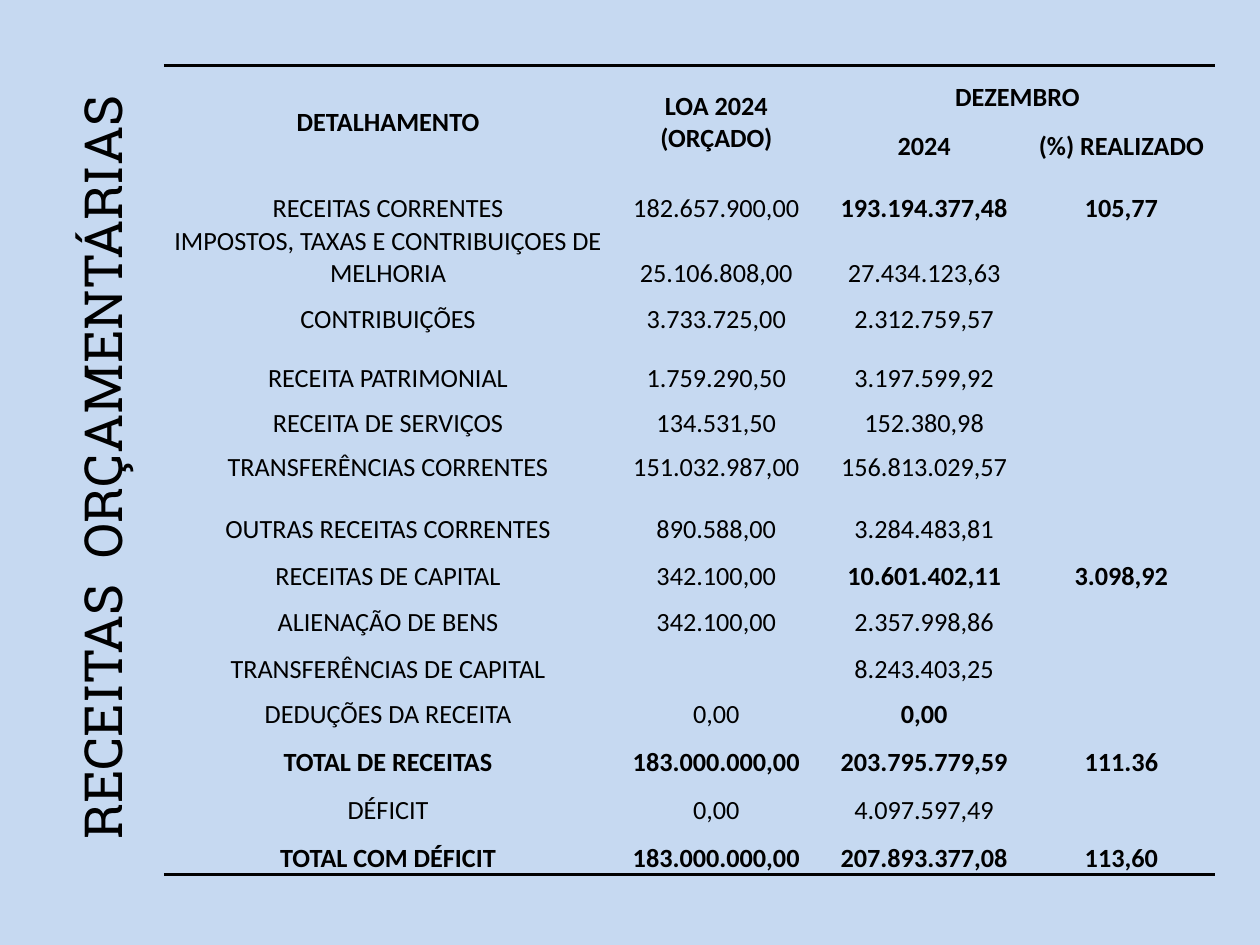
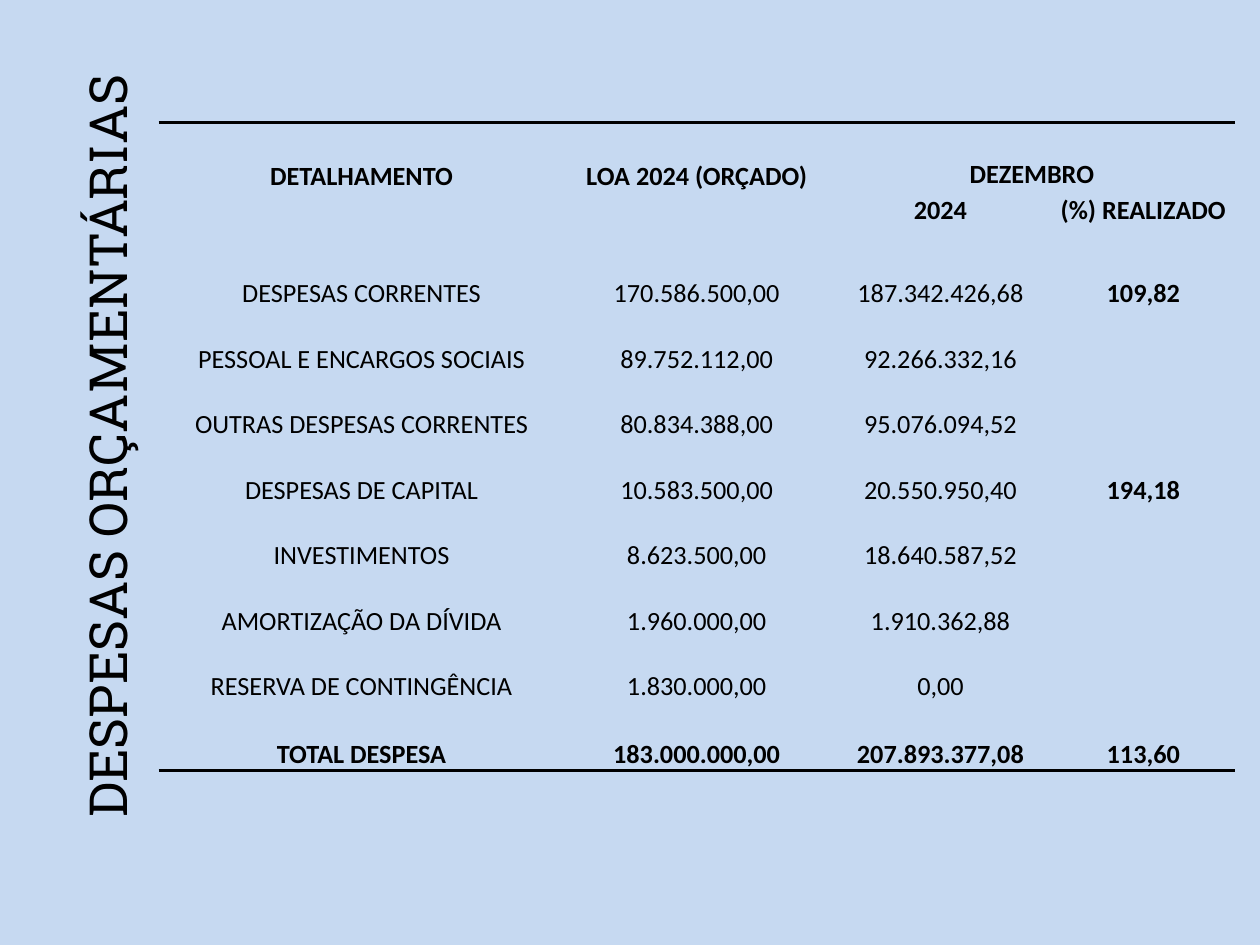
from lxml import etree
from pptx import Presentation
from pptx.dml.color import RGBColor
from pptx.enum import text
from pptx.oxml import ns
from pptx.util import Inches, Pt

COLORS = {"background": "C6D9F1", "ink": "000000"}
TITLE_FONT, TABLE_FONT = "Roboto Slab", "Calibri"
NO_GRID_STYLE = "{2D5ABB26-0587-4C30-8999-92F81FD0307C}"
HEADER_ROWS = 2

# Label, budget, executed, percentage
REVENUE = [
    ("RECEITAS CORRENTES", "182.657.900,00", "193.194.377,48", "105,77"),
    ("IMPOSTOS, TAXAS E CONTRIBUIÇOES DE MELHORIA", "25.106.808,00", "27.434.123,63", ""),
    ("CONTRIBUIÇÕES", "3.733.725,00", "2.312.759,57", ""),
    ("RECEITA PATRIMONIAL", "1.759.290,50", "3.197.599,92", ""),
    ("RECEITA DE SERVIÇOS", "134.531,50", "152.380,98", ""),
    ("TRANSFERÊNCIAS CORRENTES", "151.032.987,00", "156.813.029,57", ""),
    ("OUTRAS RECEITAS CORRENTES", "890.588,00", "3.284.483,81", ""),
    ("RECEITAS DE CAPITAL", "342.100,00", "10.601.402,11", "3.098,92"),
    ("ALIENAÇÃO DE BENS", "342.100,00", "2.357.998,86", ""),
    ("TRANSFERÊNCIAS DE CAPITAL", "", "8.243.403,25", ""),
    ("DEDUÇÕES DA RECEITA", "0,00", "0,00", ""),
    ("TOTAL DE RECEITAS", "183.000.000,00", "203.795.779,59", "111.36"),
    ("DÉFICIT", "0,00", "4.097.597,49", ""),
    ("TOTAL COM DÉFICIT", "183.000.000,00", "207.893.377,08", "113,60"),
]
REVENUE_GROUPS = {"RECEITAS CORRENTES", "RECEITAS DE CAPITAL", "DEDUÇÕES DA RECEITA"}
EXPENSES = [
    ("DESPESAS CORRENTES", "170.586.500,00", "187.342.426,68", "109,82"),
    ("PESSOAL E ENCARGOS SOCIAIS", "89.752.112,00", "92.266.332,16", ""),
    ("OUTRAS DESPESAS CORRENTES", "80.834.388,00", "95.076.094,52", ""),
    ("DESPESAS DE CAPITAL", "10.583.500,00", "20.550.950,40", "194,18"),
    ("INVESTIMENTOS", "8.623.500,00", "18.640.587,52", ""),
    ("AMORTIZAÇÃO DA DÍVIDA", "1.960.000,00", "1.910.362,88", ""),
    ("RESERVA DE CONTINGÊNCIA", "1.830.000,00", "0,00", ""),
    ("TOTAL DESPESA", "183.000.000,00", "207.893.377,08", "113,60"),
]


def write(tf, content, font=TABLE_FONT, size=15, bold=False):
    p = tf.paragraphs[0]
    p.alignment = text.PP_ALIGN.CENTER
    p.font.size = Pt(size)
    if content:
        r = p.add_run()
        r.text = content
        r.font.name, r.font.size, r.font.bold = font, Pt(size), bold
        r.font.color.rgb = RGBColor.from_string(COLORS["ink"])


def add_rule(cell, edge):
    """Draw a 2 pt line on one edge: lnT or lnB."""
    ln = etree.Element(ns.qn("a:" + edge), w=str(Pt(2)))
    fill = etree.SubElement(ln, ns.qn("a:solidFill"))
    etree.SubElement(fill, ns.qn("a:srgbClr"), val=COLORS["ink"])
    cell._tc.get_or_add_tcPr().insert(0, ln)


def style_cell(cell, anchor):
    cell.fill.solid()
    cell.fill.fore_color.rgb = RGBColor.from_string(COLORS["background"])
    cell.margin_left = cell.margin_right = cell.margin_top = Inches(0.01)
    cell.margin_bottom = 0
    cell.vertical_anchor = anchor


def add_title(slide, box, content, wrap):
    sp = slide.shapes.add_textbox(*map(Inches, box))
    tf = sp.text_frame
    tf.word_wrap = wrap
    tf.auto_size = text.MSO_AUTO_SIZE.SHAPE_TO_FIT_TEXT
    tf._txBody.bodyPr.set("vert", "vert270")
    write(tf, content, font=TITLE_FONT, size=30)


def add_budget_table(slide, left, top, widths, heights, rows, strong, blank_spans):
    box = (left, top, sum(widths), sum(heights))
    frame = slide.shapes.add_table(len(heights), len(widths), *map(Inches, box))
    table = frame.table
    table.first_row = table.horz_banding = False
    table._tbl.tblPr.find(ns.qn("a:tableStyleId")).text = NO_GRID_STYLE
    for column, width in zip(table.columns, widths):
        column.width = Inches(width)
    for row, height in zip(table.rows, heights):
        row.height = Inches(height)

    # Header and body text
    header = [("DETALHAMENTO", "LOA 2024 (ORÇADO)", "DEZEMBRO", ""),
              ("", "", "2024", "(%) REALIZADO")]
    for i, values in enumerate(header + rows):
        for j, value in enumerate(values):
            cell = table.cell(i, j)
            low = i >= HEADER_ROWS or value == "DEZEMBRO"
            style_cell(cell, text.MSO_ANCHOR.BOTTOM if low else text.MSO_ANCHOR.MIDDLE)
            bold = (i < HEADER_ROWS or j == 3 or values[0].startswith("TOTAL")
                    or (j == 2 and values[0] in strong))
            write(cell.text_frame, value, bold=bold)

    # Outer rules
    for j in range(len(widths)):
        add_rule(table.cell(0, j), "lnT")
        add_rule(table.cell(len(heights) - 1, j), "lnB")

    # Merged header cells and empty percentages
    for j in (0, 1):
        table.cell(0, j).merge(table.cell(1, j))
    table.cell(0, 2).merge(table.cell(0, 3))
    for first, last in blank_spans:
        table.cell(first, 3).merge(table.cell(last, 3))


def add_slide(prs):
    slide = prs.slides.add_slide(prs.slide_layouts[6])
    fill = slide.background.fill
    fill.solid()
    fill.fore_color.rgb = RGBColor.from_string(COLORS["background"])
    return slide


def add_revenue_slide(prs):
    slide = add_slide(prs)
    add_title(slide, (0.51, 0.52, 1.01, 6.38), "RECEITAS  ORÇAMENTÁRIAS", wrap=True)
    heights = [0.38, 0.52, 0.36, 0.52, 0.36, 0.47, 0.36, 0.35,
               0.49, 0.37, 0.37, 0.37, 0.36, 0.38, 0.38, 0.38]
    add_budget_table(slide, 1.3, 0.52, [3.56, 1.65, 1.65, 1.48], heights,
                     REVENUE, REVENUE_GROUPS, [(3, 8), (10, 12)])


def add_expense_slide(prs):
    slide = add_slide(prs)
    add_title(slide, (0.55, 0.63, 0.71, 5.82), "DESPESAS ORÇAMENTÁRIAS", wrap=False)
    heights = [0.54, 0.32, 0.63] + [0.52] * 6 + [0.54]
    add_budget_table(slide, 1.26, 0.97, [3.22, 2.1, 1.77, 1.45], heights,
                     EXPENSES, set(), [(3, 4), (6, 7)])


def main():
    prs = Presentation()
    prs.slide_width, prs.slide_height = Inches(10), Inches(7.5)
    add_revenue_slide(prs)
    add_expense_slide(prs)
    prs.save("out.pptx")


if __name__ == "__main__":
    main()
